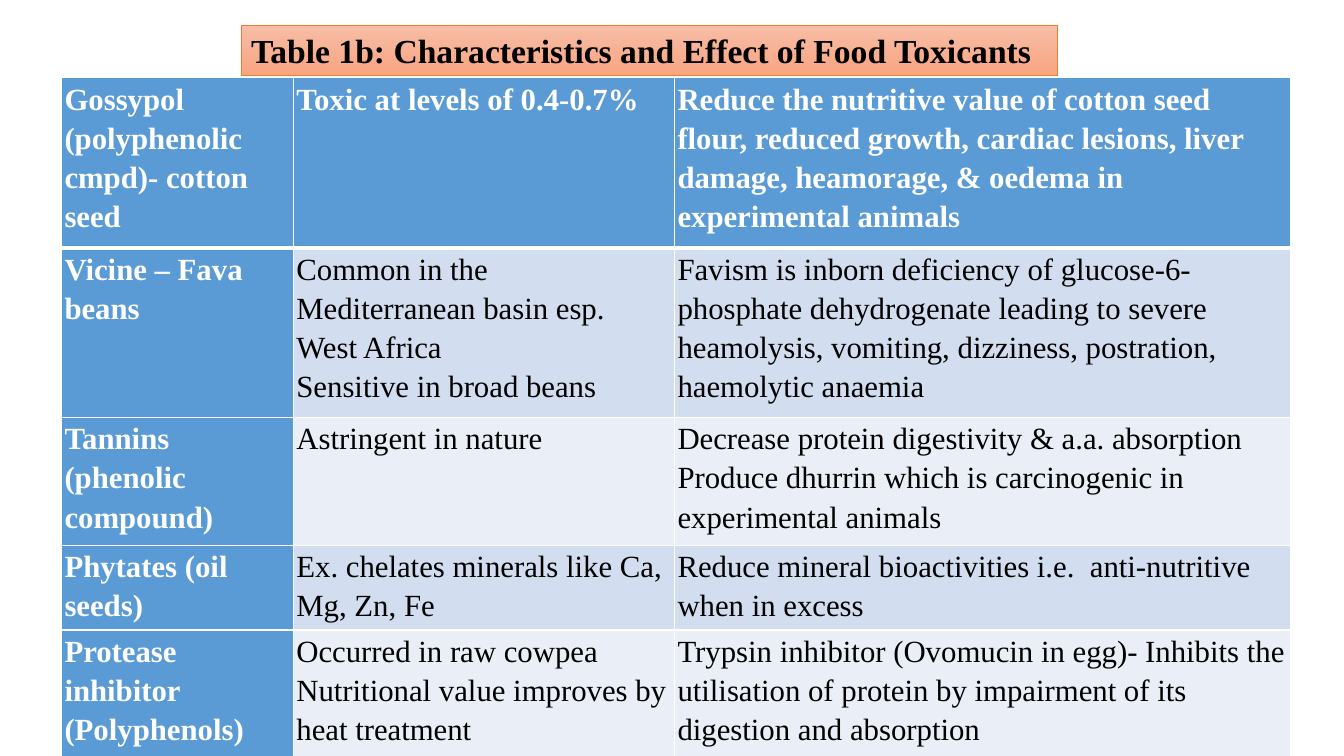
from lxml.etree import SubElement
from pptx import Presentation
from pptx.dml.color import RGBColor
from pptx.enum.text import MSO_ANCHOR, MSO_AUTO_SIZE, PP_ALIGN
from pptx.oxml.ns import qn
from pptx.util import Inches, Pt

FONT = "Times New Roman"
TITLE = "Table 1b: Characteristics and Effect of Food Toxicants"
WHITE, BLACK, BLUE = "FFFFFF", "000000", "5B9BD5"
BANDS = ["EAEFF7", "D2DEEF"]
COLUMN_WIDTHS = [2.3, 3.78, 6.11]
ROW_HEIGHTS = [1.69, 1.68, 1.27, 0.84, 1.27]
TOXICANTS = [
    ["Gossypol (polyphenolic cmpd)- cotton seed",
     "Toxic at levels of 0.4-0.7%",
     "Reduce the nutritive value of cotton seed flour, reduced growth, cardiac lesions, "
     "liver damage, heamorage, & oedema in experimental animals"],
    ["Vicine – Fava beans",
     "Common in the Mediterranean basin esp. West Africa\nSensitive in broad beans",
     "Favism is inborn deficiency of glucose-6-phosphate dehydrogenate leading to severe "
     "heamolysis, vomiting, dizziness, postration, haemolytic anaemia"],
    ["Tannins (phenolic compound)",
     "Astringent in nature",
     "Decrease protein digestivity & a.a. absorption\n"
     "Produce dhurrin which is carcinogenic in experimental animals"],
    ["Phytates (oil seeds)",
     "Ex. chelates minerals like Ca, Mg, Zn, Fe",
     "Reduce mineral bioactivities i.e.  anti-nutritive when in excess"],
    ["Protease inhibitor (Polyphenols)",
     "Occurred in raw cowpea\nNutritional value improves by heat treatment",
     "Trypsin inhibitor (Ovomucin in egg)- Inhibits the utilisation of protein by "
     "impairment of its digestion and absorption"],
]


def colour(value):
    return RGBColor.from_string(value)


def write(frame, text, size=22, ink=BLACK, bold=False, spacing=1.0):
    for index, line in enumerate(text.split("\n")):
        para = frame.add_paragraph() if index else frame.paragraphs[0]
        para.alignment = PP_ALIGN.LEFT
        para.line_spacing = spacing
        span = para.add_run()
        span.text = line
        span.font.name = FONT
        span.font.size = Pt(size)
        span.font.bold = bold
        span.font.color.rgb = colour(ink)


def add_border(cell, side, width):
    line = SubElement(cell._tc.get_or_add_tcPr(), qn(f"a:ln{side}"), w=str(Pt(width)))
    fill = SubElement(line, qn("a:solidFill"))
    SubElement(fill, qn("a:srgbClr"), val=WHITE)


def add_title(page):
    box = page.shapes.title
    box.left, box.top = Inches(2.39), Inches(0.25)
    box.width, box.height = Inches(8.1), Inches(0.5)
    box.fill.gradient()
    box.fill.gradient_angle = 270
    for stop, shade in zip(box.fill.gradient_stops, ["F7BDA5", "F8A582"]):
        stop.color.rgb = colour(shade)
    box.line.color.rgb = colour("ED7D31")
    box.line.width = Pt(0.5)
    frame = box.text_frame
    frame.word_wrap = True
    frame.auto_size = MSO_AUTO_SIZE.NONE
    frame.vertical_anchor = MSO_ANCHOR.MIDDLE
    write(frame, TITLE, size=24, bold=True)


def format_cell(cell, text, row, column):
    heading = row == 0 or column == 0
    cell.margin_left = cell.margin_right = Inches(0.03)
    cell.margin_top = cell.margin_bottom = 0
    for side in "LRTB":
        thick = (row, side) in [(0, "B"), (1, "T")]
        add_border(cell, side, 3 if thick else 1)
    cell.fill.solid()
    cell.fill.fore_color.rgb = colour(BLUE if heading else BANDS[row % 2])
    write(cell.text_frame, text, ink=WHITE if heading else BLACK, bold=heading, spacing=1.15)


def add_toxicant_table(page):
    table = page.shapes.add_table(
        len(ROW_HEIGHTS), len(COLUMN_WIDTHS), Inches(0.61), Inches(0.77),
        Inches(sum(COLUMN_WIDTHS)), Inches(sum(ROW_HEIGHTS))).table
    for column, width in zip(table.columns, COLUMN_WIDTHS):
        column.width = Inches(width)
    for row, height in zip(table.rows, ROW_HEIGHTS):
        row.height = Inches(height)
    for row, texts in enumerate(TOXICANTS):
        for column, text in enumerate(texts):
            format_cell(table.cell(row, column), text, row, column)


def main():
    deck = Presentation()
    deck.slide_width, deck.slide_height = Inches(13.33), Inches(7.5)
    page = deck.slides.add_slide(deck.slide_layouts.get_by_name("Title Only"))
    add_title(page)
    add_toxicant_table(page)
    deck.save("out.pptx")


if __name__ == "__main__":
    main()
